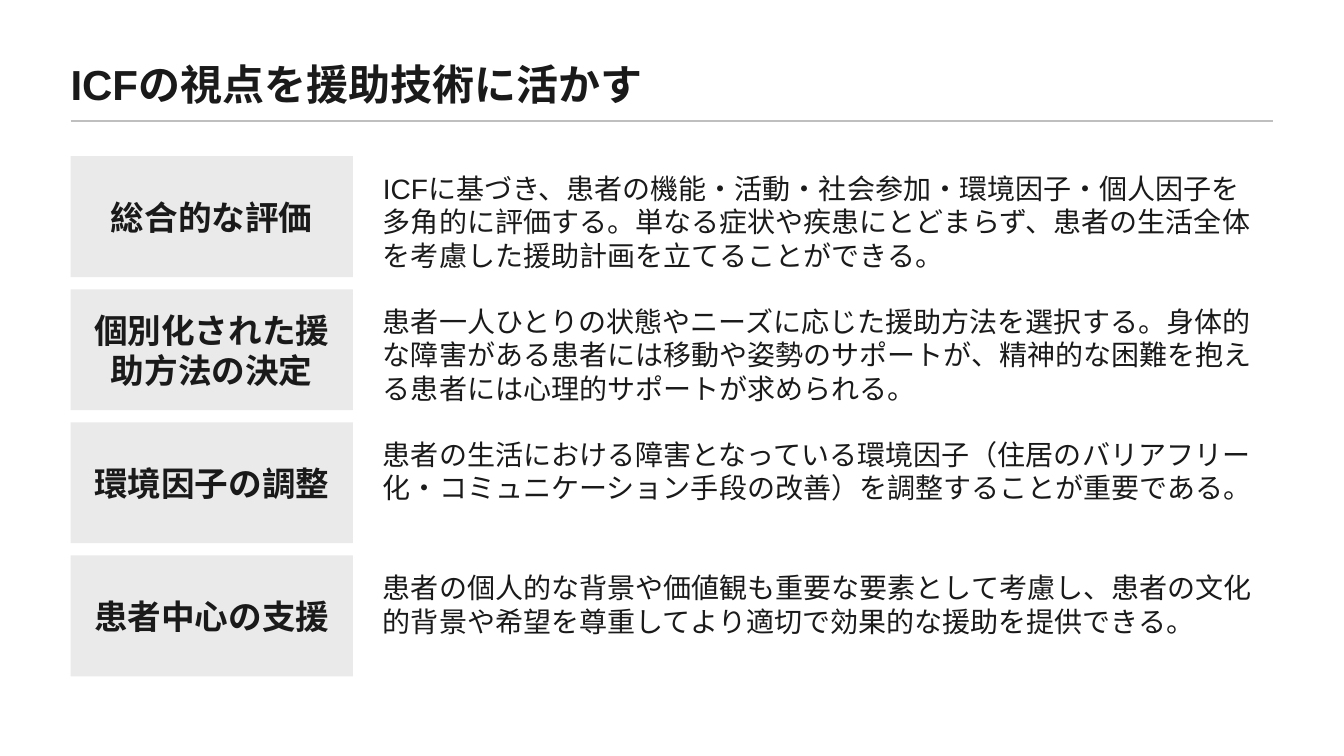
from lxml.etree import SubElement
from pptx import Presentation
from pptx.dml.color import RGBColor
from pptx.enum.shapes import MSO_CONNECTOR, MSO_SHAPE
from pptx.enum.text import MSO_ANCHOR, PP_ALIGN
from pptx.oxml.ns import qn
from pptx.util import Emu, Pt

EMU_PER_PX = 9144  # 100 px to the inch

LEFT, CONTENT_WIDTH = 70, 1193
ROW_TOP, ROW_HEIGHT, ROW_GAP = 155, 120, 12
LABEL_WIDTH, COLUMN_GAP, DETAIL_INSET = 280, 20, 10

TITLE = "ICFの視点を援助技術に活かす"
ROWS = [
    ("総合的な評価",
     "ICFに基づき、患者の機能・活動・社会参加・環境因子・個人因子を多角的に評価する。"
     "単なる症状や疾患にとどまらず、患者の生活全体を考慮した援助計画を立てることができる。"),
    ("個別化された援助方法の決定",
     "患者一人ひとりの状態やニーズに応じた援助方法を選択する。"
     "身体的な障害がある患者には移動や姿勢のサポートが、"
     "精神的な困難を抱える患者には心理的サポートが求められる。"),
    ("環境因子の調整",
     "患者の生活における障害となっている環境因子"
     "（住居のバリアフリー化・コミュニケーション手段の改善）を調整することが重要である。"),
    ("患者中心の支援",
     "患者の個人的な背景や価値観も重要な要素として考慮し、"
     "患者の文化的背景や希望を尊重してより適切で効果的な援助を提供できる。"),
]


def px(*lengths):
    return [Emu(length * EMU_PER_PX) for length in lengths]


def color(hex_string):
    return RGBColor.from_string(hex_string)


def write_text(frame, text, *, size, ink, font, bold=False,
               align=PP_ALIGN.LEFT, anchor=MSO_ANCHOR.TOP):
    frame.word_wrap = True
    frame.vertical_anchor = anchor
    paragraph = frame.paragraphs[0]
    paragraph.alignment = align
    run = paragraph.add_run()
    run.text = text
    run.font.name = font
    run.font.size = Pt(size)
    run.font.bold = bold
    run.font.color.rgb = color(ink)


class SlideBuilder:
    font = "Arial"
    ink = "1A1A1A"
    rule_color = "BFBFBF"
    label_fill = "EAEAEA"

    def __init__(self, slide):
        self.slide = slide

    def text_box(self, left, top, width, height, text, margin=None, **text_format):
        """Add a text box; margin, if given, sets all four insets in px."""
        frame = self.slide.shapes.add_textbox(*px(left, top, width, height)).text_frame
        if margin is not None:
            (inset,) = px(margin)
            frame.margin_left = frame.margin_right = inset
            frame.margin_top = frame.margin_bottom = inset
        write_text(frame, text, ink=self.ink, font=self.font, **text_format)

    def label(self, left, top, width, height, text):
        shape = self.slide.shapes.add_shape(
            MSO_SHAPE.RECTANGLE, *px(left, top, width, height))
        shape.shadow.inherit = False
        shape.fill.solid()
        shape.fill.fore_color.rgb = color(self.label_fill)
        shape.line.fill.background()
        write_text(shape.text_frame, text, size=24, bold=True, ink=self.ink,
                   font=self.font, align=PP_ALIGN.CENTER, anchor=MSO_ANCHOR.MIDDLE)

    def rule(self, left, top, width):
        connector = self.slide.shapes.add_connector(
            MSO_CONNECTOR.STRAIGHT, *px(left, top, left + width, top))
        connector.line.color.rgb = color(self.rule_color)
        connector.line.width = Pt(1)
        SubElement(connector._element.spPr, qn("a:effectLst"))


def main():
    presentation = Presentation()
    presentation.slide_width, presentation.slide_height = px(1333, 750)
    builder = SlideBuilder(presentation.slides.add_slide(presentation.slide_layouts[6]))

    builder.text_box(LEFT, 42, CONTENT_WIDTH, 82, TITLE, margin=0, size=30,
                     bold=True, anchor=MSO_ANCHOR.MIDDLE)
    builder.rule(LEFT, 120, CONTENT_WIDTH)

    detail_left = LEFT + LABEL_WIDTH + COLUMN_GAP
    detail_width = LEFT + CONTENT_WIDTH - detail_left
    for index, (label, detail) in enumerate(ROWS):
        top = ROW_TOP + index * (ROW_HEIGHT + ROW_GAP)
        builder.label(LEFT, top, LABEL_WIDTH, ROW_HEIGHT, label)
        builder.text_box(detail_left, top + DETAIL_INSET, detail_width,
                         ROW_HEIGHT - 2 * DETAIL_INSET, detail, size=20)

    presentation.save("out.pptx")


if __name__ == "__main__":
    main()
